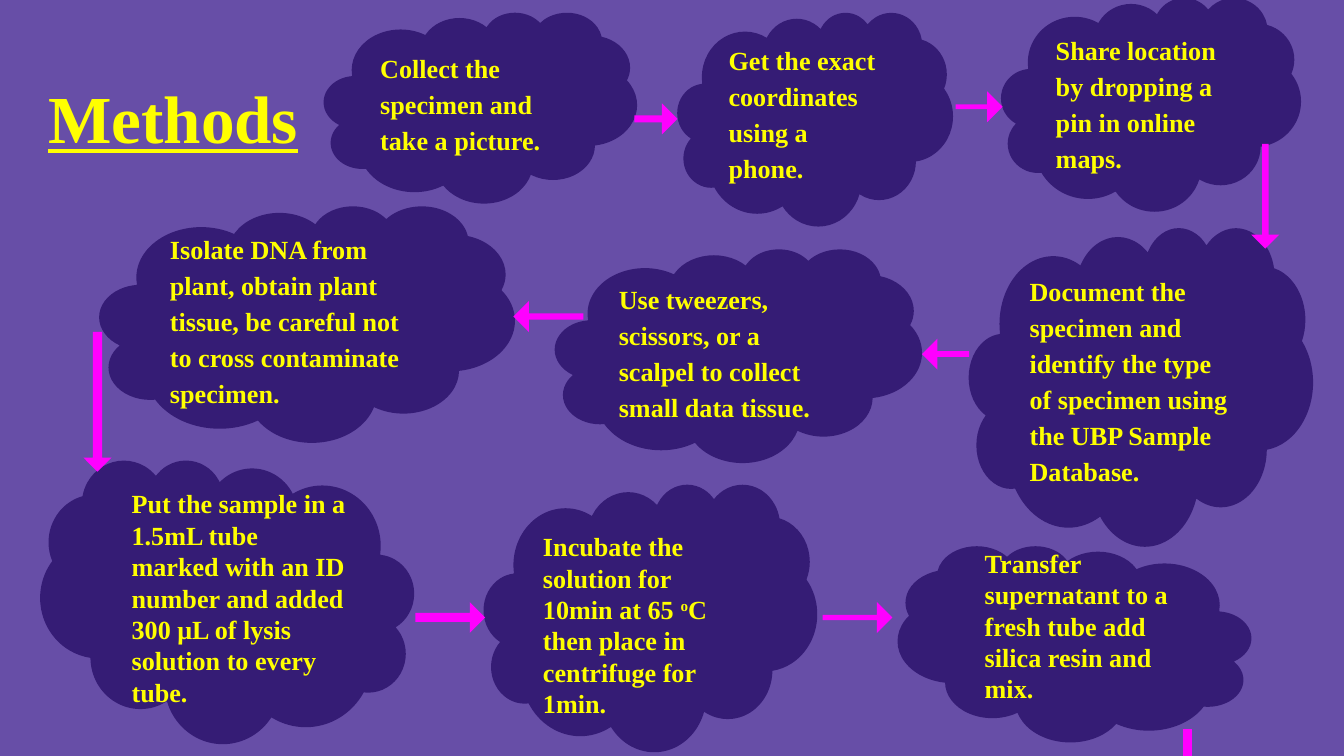
from dataclasses import dataclass

from pptx import Presentation
from pptx.dml.color import RGBColor
from pptx.enum.shapes import MSO_SHAPE
from pptx.enum.text import MSO_ANCHOR, PP_ALIGN
from pptx.shapes.autoshape import Shape
from pptx.slide import Slide
from pptx.text.text import _Paragraph
from pptx.util import Inches, Pt


@dataclass(frozen=True)
class Theme:
    background: RGBColor = RGBColor(0x67, 0x4E, 0xA7)
    cloud: RGBColor = RGBColor(0x35, 0x1C, 0x75)
    arrow: RGBColor = RGBColor(0xFF, 0x00, 0xFF)
    text: RGBColor = RGBColor(0xFF, 0xFF, 0x00)
    font: str = "Times New Roman"
    title_size: int = 36
    body_size: int = 14
    inset: float = 0.1


@dataclass(frozen=True)
class Box:
    x: float
    y: float
    w: float
    h: float


@dataclass(frozen=True)
class Step:
    box: Box
    runs: tuple[str, ...]
    shift: float = 0
    spacing: float = 1.15
    flipped: bool = False


@dataclass(frozen=True)
class Arrow:
    box: Box
    kind: MSO_SHAPE
    adjustments: tuple[float, ...]
    rotation: float = 0


THEME = Theme()
RIGHT, LEFT, DOWN = MSO_SHAPE.RIGHT_ARROW, MSO_SHAPE.LEFT_ARROW, MSO_SHAPE.DOWN_ARROW

STEPS = [
    Step(Box(2.41, 0.09, 2.33, 1.42), ("Collect the specimen and take a picture.",), -0.01),
    Step(Box(5.04, 0.09, 2.05, 1.59), ("Get the exact coordinates using a phone.",), -0.02),
    Step(Box(7.45, -0.02, 2.23, 1.59),
         ("Share location by dropping a pin in online maps.",), 0.02),
    Step(Box(7.21, 1.69, 2.56, 2.37),
         ("Document the specimen and identify the type of specimen using "
          "the UBP Sample Database.",)),
    Step(Box(4.13, 1.85, 2.73, 1.59),
         ("Use tweezers, scissors, or a scalpel to collect small data tissue.",)),
    Step(Box(0.74, 1.53, 3.09, 1.76),
         ("Isolate DNA from plant, obtain plant tissue, be careful not to "
          "cross contaminate specimen.",)),
    Step(Box(0.3, 3.42, 2.78, 2.11),
         ("Put the sample in a 1.5mL tube marked with an ID number and added "
          "300 μL of lysis solution to every tube.",), 0.02, 1, True),
    Step(Box(6.68, 4.06, 2.63, 1.46),
         ("Transfer supernatant to a fresh tube add silica resin and mix.",),
         -0.1, 1, True),
    Step(Box(3.6, 3.6, 2.48, 1.99),
         ("Incubate the solution for 10min at 65 ", "o",
          "C then place in centrifuge for 1min."), 0.1, 1),
]

ARROWS = [
    Arrow(Box(4.72, 0.77, 0.32, 0.23), RIGHT, (0.22, 0.5)),
    Arrow(Box(7.11, 0.68, 0.35, 0.23), RIGHT, (0.15, 0.5)),
    Arrow(Box(9.31, 1.07, 0.21, 0.78), DOWN, (0.23, 0.5)),
    Arrow(Box(6.86, 2.52, 0.35, 0.23), LEFT, (0.19, 0.5)),
    Arrow(Box(3.82, 2.24, 0.52, 0.23), LEFT, (0.2, 0.5)),
    Arrow(Box(0.62, 2.47, 0.21, 1.04), DOWN, (0.33, 0.5)),
    Arrow(Box(3.09, 4.48, 0.52, 0.23), RIGHT, (0.29, 0.5)),
    Arrow(Box(6.12, 4.48, 0.52, 0.23), RIGHT, (0.17, 0.5)),
    Arrow(Box(8.69, 5.4, 0.29, 0.26), MSO_SHAPE.MATH_MINUS, (0.24,), 90),
]


def lengths(box: Box) -> tuple[Inches, ...]:
    return tuple(Inches(v) for v in (box.x, box.y, box.w, box.h))


def add_run(p: _Paragraph, text: str, size: int, underline: bool = False,
            superscript: bool = False) -> None:
    r = p.add_run()
    r.text = text
    r.font.name = THEME.font
    r.font.size = Pt(size)
    r.font.bold = True
    r.font.color.rgb = THEME.text
    if underline:
        r.font.underline = True
    if superscript:
        r.font._element.set("baseline", "30000")


def add_filled(s: Slide, kind: MSO_SHAPE, box: Box, color: RGBColor) -> Shape:
    sp = s.shapes.add_shape(kind, *lengths(box))
    sp.shadow.inherit = False
    sp.fill.solid()
    sp.fill.fore_color.rgb = color
    sp.line.fill.background()
    return sp


def add_step(s: Slide, step: Step) -> None:
    sp = add_filled(s, MSO_SHAPE.CLOUD, step.box, THEME.cloud)
    if step.flipped:
        sp._element.spPr.get_or_add_xfrm().set("flipH", "1")
    tf = sp.text_frame
    tf.word_wrap = True
    tf.vertical_anchor = MSO_ANCHOR.MIDDLE
    tf.margin_left = tf.margin_right = Inches(THEME.inset)
    tf.margin_top = Inches(THEME.inset + max(0, 2 * step.shift))
    tf.margin_bottom = Inches(THEME.inset + max(0, -2 * step.shift))
    p = tf.paragraphs[0]
    p.alignment = PP_ALIGN.LEFT
    p.line_spacing = float(step.spacing)
    for i, text in enumerate(step.runs):
        add_run(p, text, THEME.body_size, superscript=i == 1)


def add_title(s: Slide, text: str, box: Box) -> None:
    tf = s.shapes.add_textbox(*lengths(box)).text_frame
    tf.word_wrap = True
    tf.margin_left = tf.margin_right = Inches(THEME.inset)
    tf.margin_top = tf.margin_bottom = Inches(THEME.inset)
    add_run(tf.paragraphs[0], text, THEME.title_size, underline=True)


def add_arrow(s: Slide, arrow: Arrow) -> None:
    sp = add_filled(s, arrow.kind, arrow.box, THEME.arrow)
    sp.rotation = arrow.rotation
    for i, value in enumerate(arrow.adjustments):
        sp.adjustments[i] = value


def main() -> None:
    prs = Presentation()
    prs.slide_width = Inches(10)
    prs.slide_height = Inches(10 * 9 / 16)
    s = prs.slides.add_slide(prs.slide_layouts[6])
    s.background.fill.solid()
    s.background.fill.fore_color.rgb = THEME.background
    for step in STEPS:
        add_step(s, step)
    add_title(s, "Methods", Box(0.26, 0.47, 2.15, 0.93))
    for arrow in ARROWS:
        add_arrow(s, arrow)
    prs.save("out.pptx")


if __name__ == "__main__":
    main()
